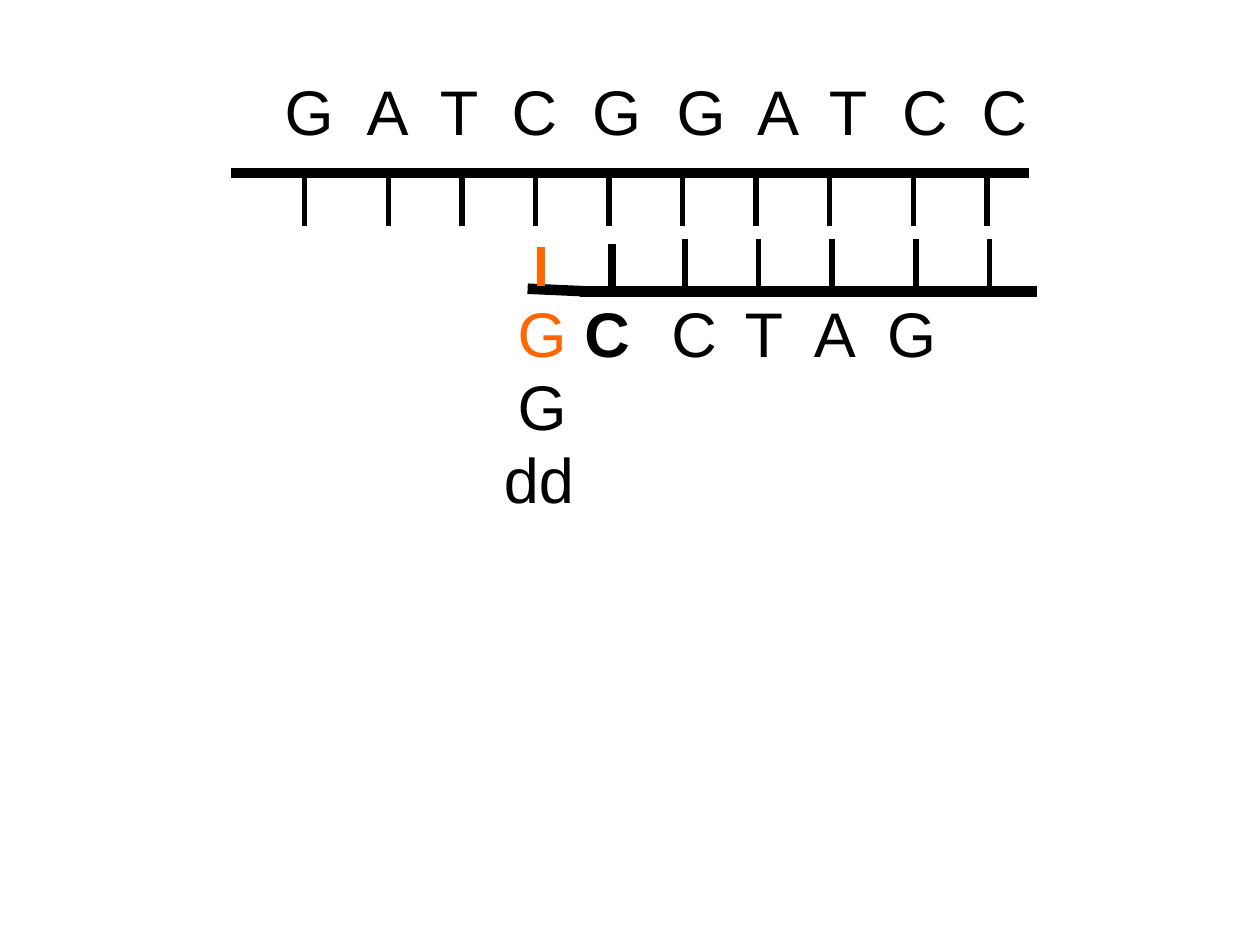
from pptx import Presentation
from pptx.dml.color import RGBColor
from pptx.enum.shapes import MSO_CONNECTOR
from pptx.oxml.xmlchemy import OxmlElement
from pptx.util import Pt

STRAIGHT = MSO_CONNECTOR.STRAIGHT
COLORS = {"black": "000000", "orange": "FF6600"}
FONT = {"name": "Arial", "size": Pt(36)}

# Each text: box (left, top, width, height), line spacing, tab stops,
# and paragraphs of (indent, runs of (text, color, bold)).
TEXTS = [
    {
        "box": (162, 41.3, 425.5, 44),
        "spacing": None,
        "tabs": [46.8, 88.6, 129.6, 175.7, 223.9, 270, 311, 352.8, 398.2],
        "paragraphs": [
            (0.7, [("G\tA\tT\tC\tG\tG\tA\tT\tC\tC", "black", False)]),
        ],
    },
    {
        "box": (287.3, 169.5, 288, 84.2),
        "spacing": Pt(41.9),
        "tabs": [87.8, 129.6, 169.2, 211, 259.2],
        "paragraphs": [
            (8.6, [("G ", "orange", False), ("C\t", "black", True),
                   ("C\tT\tA\tG\tG", "black", False)]),
            (0.7, [("dd", "black", False)]),
        ],
    },
]

TEMPLATE_Y, PRIMER_Y = 99, 166.5
TICK_LENGTH = 30
TEMPLATE_TICKS = [174, 222, 264, 306, 348, 390, 432, 474, 522, 564]
PRIMER_OFFSET = 1.5
PAIRED_TICKS = 5
PRIMER_JOINTS = [331.5, 366, 424.5, 592.5]
STRAND_WIDTH, TICK_WIDTH, NEW_TICK_WIDTH = 6, 3, 4.5
NEW_TICK_BOTTOM = 163.5
NEW_TICKS = [(349.5, 139.5, "black"), (309, 141, "orange")]


def add_line(slide, start, end, width, color="black"):
    line = slide.shapes.add_connector(STRAIGHT, *map(Pt, start + end))
    line.line.width = Pt(width)
    line.line.color.rgb = RGBColor.from_string(COLORS[color])
    line._element.spPr.append(OxmlElement("a:effectLst"))


def set_tabs(paragraph, indent, stops):
    """Set the left margin and tab stops; a first-line indent would reset the stops."""
    properties = paragraph._p.get_or_add_pPr()
    properties.set("marL", str(Pt(indent)))
    tab_list = OxmlElement("a:tabLst")
    for stop in stops:
        tab = OxmlElement("a:tab")
        tab.set("pos", str(Pt(stop)))
        tab.set("algn", "l")
        tab_list.append(tab)
    properties.append(tab_list)


def add_text(slide, text):
    frame = slide.shapes.add_textbox(*map(Pt, text["box"])).text_frame
    frame.word_wrap = True
    for side in ("left", "top", "right", "bottom"):
        setattr(frame, f"margin_{side}", 0)
    for index, (indent, runs) in enumerate(text["paragraphs"]):
        paragraph = frame.add_paragraph() if index else frame.paragraphs[0]
        set_tabs(paragraph, indent, text["tabs"])
        paragraph.line_spacing = text["spacing"]
        for words, color, bold in runs:
            run = paragraph.add_run()
            run.text = words
            for name, value in {**FONT, "bold": bold}.items():
                setattr(run.font, name, value)
            run.font.color.rgb = RGBColor.from_string(COLORS[color])


def main():
    presentation = Presentation()
    presentation.slide_width, presentation.slide_height = Pt(720), Pt(540)
    slide = presentation.slides.add_slide(presentation.slide_layouts[6])

    add_line(slide, (132, TEMPLATE_Y), (588, TEMPLATE_Y), STRAND_WIDTH)
    for x in TEMPLATE_TICKS:
        add_line(slide, (x, TEMPLATE_Y), (x, TEMPLATE_Y + TICK_LENGTH), TICK_WIDTH)

    for left, right in zip(PRIMER_JOINTS, PRIMER_JOINTS[1:]):
        add_line(slide, (left, PRIMER_Y), (right, PRIMER_Y), STRAND_WIDTH)
    for template_x in TEMPLATE_TICKS[-PAIRED_TICKS:]:
        x = template_x + PRIMER_OFFSET
        add_line(slide, (x, PRIMER_Y - TICK_LENGTH), (x, PRIMER_Y), TICK_WIDTH)

    add_line(slide, (335, PRIMER_Y), (301.5, 165), STRAND_WIDTH)
    for x, top, color in NEW_TICKS:
        add_line(slide, (x, top), (x, NEW_TICK_BOTTOM), NEW_TICK_WIDTH, color)

    for text in TEXTS:
        add_text(slide, text)
    presentation.save("out.pptx")


if __name__ == "__main__":
    main()
